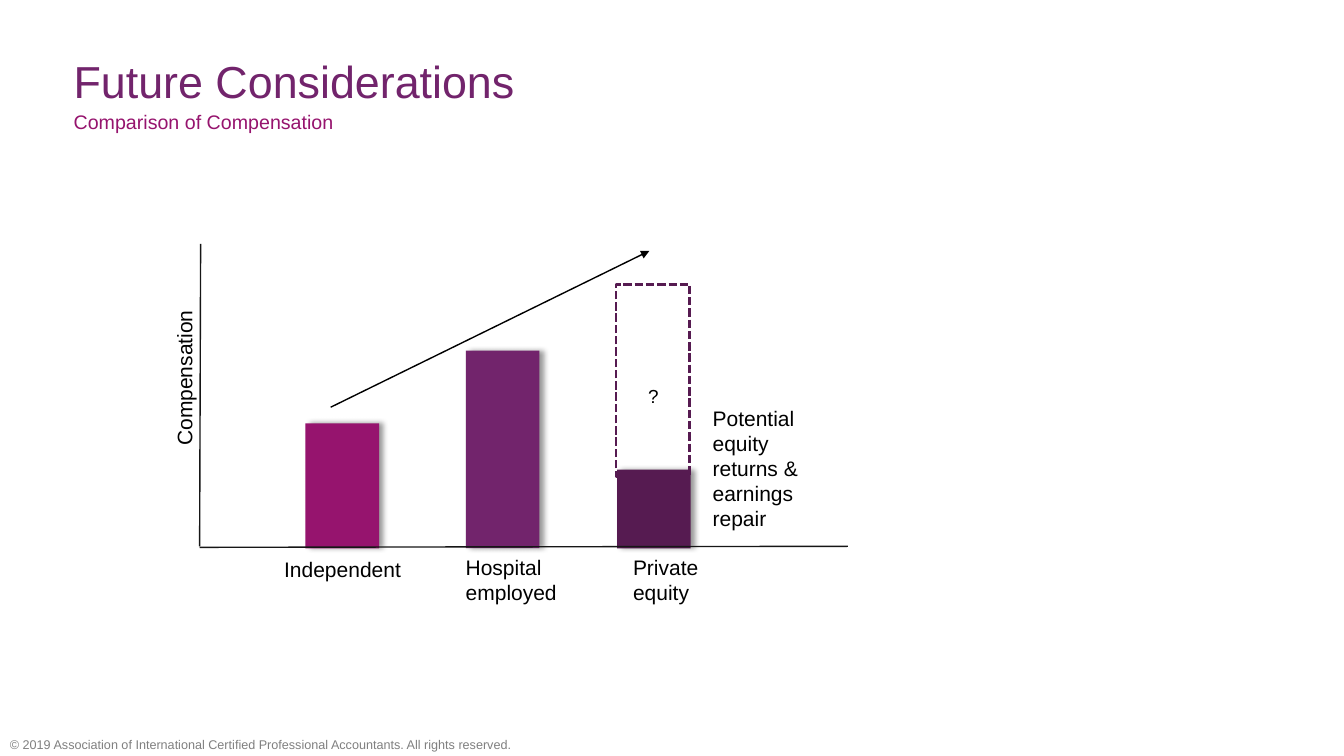
from lxml import etree
from pptx import Presentation
from pptx.dml.color import RGBColor
from pptx.enum.dml import MSO_LINE
from pptx.enum.shapes import MSO_CONNECTOR, MSO_SHAPE
from pptx.enum.text import MSO_ANCHOR, MSO_AUTO_SIZE, PP_ALIGN
from pptx.oxml import parse_xml
from pptx.oxml.ns import nsdecls, qn
from pptx.util import Pt

RECTANGLE = MSO_SHAPE.RECTANGLE
STRAIGHT = MSO_CONNECTOR.STRAIGHT
SQUARE_DASH = MSO_LINE.SQUARE_DOT
TOP = MSO_ANCHOR.TOP
LEFT = PP_ALIGN.LEFT
NO_AUTOFIT = MSO_AUTO_SIZE.NONE

PURPLE = RGBColor(0x72, 0x24, 0x6C)
MAGENTA = RGBColor(0x96, 0x14, 0x6E)
PLUM = RGBColor(0x56, 0x1B, 0x51)
BLACK = RGBColor(0, 0, 0)
AXIS = RGBColor(0x16, 0x16, 0x16)
GRAY = RGBColor(0x80, 0x80, 0x80)

PX = 9144
BAR_WIDTH = 73
BASELINE = 544


def px(*lengths):
    return [length * PX for length in lengths]


def write(holder, text, size, color):
    frame = holder.text_frame
    for key, value in {"word_wrap": True, "auto_size": NO_AUTOFIT,
                       "vertical_anchor": TOP}.items():
        setattr(frame, key, value)
    frame.text = text
    paragraph = frame.paragraphs[0]
    paragraph.alignment = LEFT
    font = paragraph.runs[0].font
    for key, value in {"name": "Arial", "size": Pt(size), "bold": False}.items():
        setattr(font, key, value)
    font.color.rgb = color
    return paragraph


prs = Presentation()
prs.slide_width, prs.slide_height = px(1333, 750)
slide = prs.slides.add_slide(prs.slide_layouts[1])
shapes = slide.shapes

title, subtitle = slide.placeholders
headings = [
    (title, (73, 53, 886, 86), "Future Considerations", 32, PURPLE),
    (subtitle, (73, 109, 262, 29), "Comparison of Compensation", 14, MAGENTA),
]
for holder, box, text, size, color in headings:
    holder.left, holder.top, holder.width, holder.height = px(*box)
    for side in ("left", "top", "right", "bottom"):
        setattr(holder.text_frame, "margin_" + side, 0)
    paragraph = write(holder, text, size, color)
    paragraph.space_before = Pt(0)
    properties = paragraph._p.get_or_add_pPr()
    properties.set("marL", "0")
    properties.set("indent", "0")
    etree.SubElement(properties, qn("a:buNone"))

bars = [(303, 420, MAGENTA), (612, 466, PLUM), (462, 348, PURPLE)]
for left, top, color in bars:
    bar = shapes.add_shape(RECTANGLE, *px(left, top, BAR_WIDTH, BASELINE - top))
    bar.fill.solid()
    bar.fill.fore_color.rgb = color
    bar.line.fill.background()
    bar._element.spPr.append(parse_xml(
        f'<a:effectLst {nsdecls("a")}><a:outerShdw blurRad="{Pt(4)}" dist="{Pt(3)}" dir="0" '
        'algn="l" rotWithShape="0"><a:srgbClr val="000000"><a:alpha val="40000"/>'
        '</a:srgbClr></a:outerShdw></a:effectLst>'))

potential = shapes.add_shape(RECTANGLE, *px(611, 282, BAR_WIDTH, 191))
potential.shadow.inherit = False
potential.fill.background()
potential.line.color.rgb = PLUM
potential.line.width = Pt(2)
potential.line.dash_style = SQUARE_DASH

lines = [
    ((199, 242, 198, 542), AXIS, False),
    ((198, 543, 841, 542), AXIS, False),
    ((328, 404, 644, 249), BLACK, True),
]
for ends, color, is_trend in lines:
    line = shapes.add_connector(STRAIGHT, *px(*ends))
    line.line.color.rgb = color
    line.line.width = Pt(1)
    if is_trend:
        etree.SubElement(line.line._get_or_add_ln(), qn("a:tailEnd"), type="triangle")
    etree.SubElement(line._element.spPr, qn("a:effectLst"))

labels = [
    ((0, 726, 541, 25), "© 2019 Association of International Certified Professional "
     "Accountants. All rights reserved.", 9, GRAY, 0),
    ((633, 377, 22, 33), "?", 13.5, BLACK, 0),
    ((697, 397, 144, 111), "Potential equity returns & earnings repair", 15, BLACK, 0),
    ((272, 547, 144, 35), "Independent", 15, BLACK, 0),
    ((452, 545, 115, 61), "Hospital employed", 15, BLACK, 0),
    ((618, 545, 98, 61), "Private equity", 15, BLACK, 0),
    ((100, 352, 165, 35), "Compensation", 15, BLACK, 270),
]
for box, text, size, color, rotation in labels:
    label = shapes.add_textbox(*px(*box))
    label.rotation = rotation
    write(label, text, size, color)

prs.save("out.pptx")
